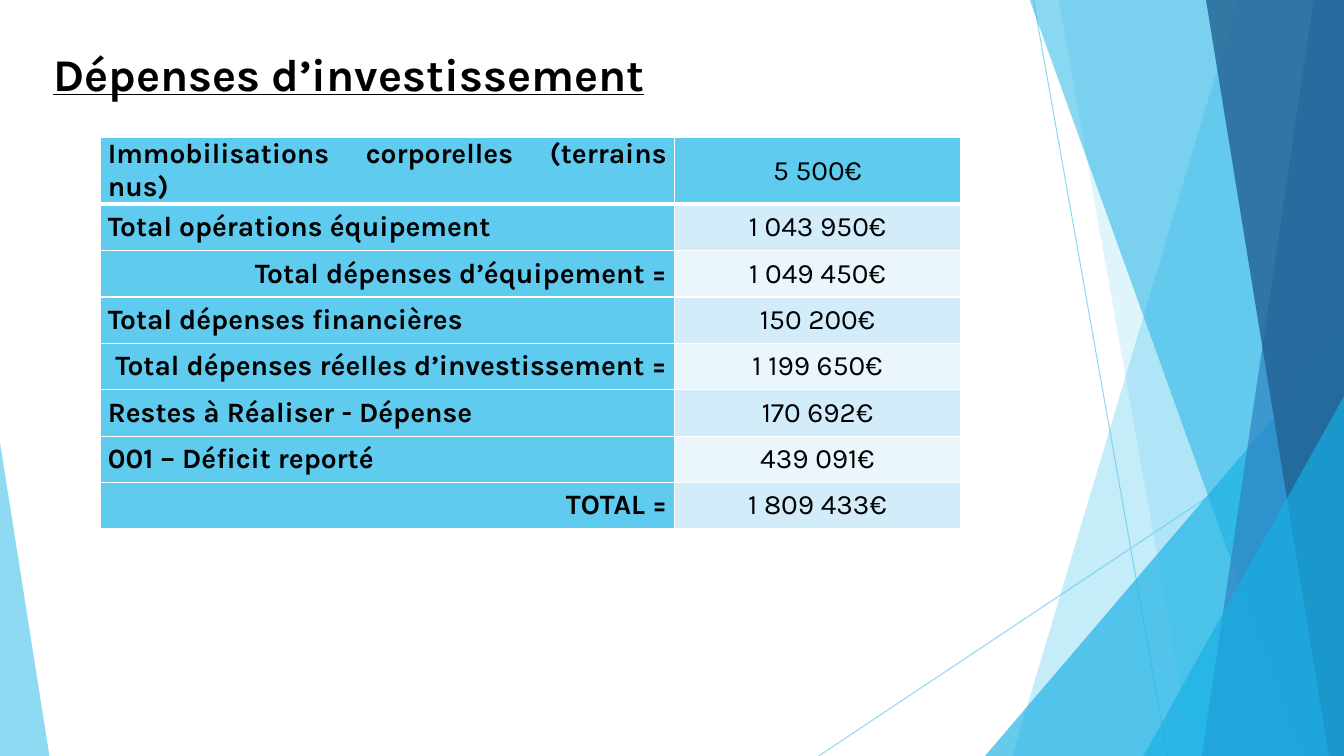
from lxml import etree
from pptx import Presentation
from pptx.dml.color import RGBColor
from pptx.enum.shapes import MSO_CONNECTOR, MSO_SHAPE
from pptx.enum.text import MSO_ANCHOR, PP_ALIGN
from pptx.oxml.ns import qn
from pptx.util import Inches, Pt

STRAIGHT = MSO_CONNECTOR.STRAIGHT
TRIANGLE = MSO_SHAPE.ISOSCELES_TRIANGLE
TOP, MIDDLE = MSO_ANCHOR.TOP, MSO_ANCHOR.MIDDLE
LEFT, CENTER, RIGHT, JUSTIFY = PP_ALIGN.LEFT, PP_ALIGN.CENTER, PP_ALIGN.RIGHT, PP_ALIGN.JUSTIFY
WIDTH, HEIGHT = 13.33, 7.5
FONT = "Karla"
COLORS = {
    "sky": "5FCBEF", "azure": "17B0E4", "blue": "2E83C3", "navy": "226292",
    "band": "D2ECF9", "pale": "EAF6FC", "white": "FFFFFF", "black": "000000",
}
EXPENSES = [
    ("Immobilisations corporelles (terrains nus)", JUSTIFY, "5 500€"),
    ("Total opérations équipement", JUSTIFY, "1 043 950€"),
    ("Total dépenses d’équipement =", RIGHT, "1 049 450€"),
    ("Total dépenses financières", JUSTIFY, "150 200€"),
    ("Total dépenses réelles d’investissement =", RIGHT, "1 199 650€"),
    ("Restes à Réaliser - Dépense", JUSTIFY, "170 692€"),
    ("001 – Déficit reporté", LEFT, "439 091€"),
    ("TOTAL =", RIGHT, "1 809 433€"),
]


def color(name):
    """Return the named colour."""
    return RGBColor.from_string(COLORS[name])


def set_alpha(part, percent):
    """Make the solid colour of a fill or line partly transparent."""
    tone = next(part.iter(qn("a:srgbClr")))
    etree.SubElement(tone, qn("a:alpha"), val=str(percent * 1000))


def paint(shape, name, percent):
    """Give a shape a translucent fill without outline or shadow."""
    shape.shadow.inherit = False
    shape.fill.solid()
    shape.fill.fore_color.rgb = color(name)
    shape.line.fill.background()
    set_alpha(shape._element.spPr, percent)


def add_ray(page, start, end):
    """Draw a thin translucent line between two points."""
    ray = page.shapes.add_connector(STRAIGHT, *(Inches(value) for value in start + end))
    ray.line.color.rgb = color("sky")
    ray.line.width = Pt(0.75)
    properties = ray._element.spPr
    set_alpha(properties, 70)
    etree.SubElement(properties, qn("a:effectLst"))


def add_facet(page, top_x, bottom_x, name, percent):
    """Draw a full-height panel from a slanted left edge to the right edge."""
    builder = page.shapes.build_freeform(Inches(top_x), Inches(-0.01))
    corners = [(WIDTH, -0.01), (WIDTH, HEIGHT), (bottom_x, HEIGHT)]
    builder.add_line_segments([(Inches(x), Inches(y)) for x, y in corners])
    paint(builder.convert_to_shape(), name, percent)


def add_wedge(page, left, top, width, apex, name, percent):
    """Draw a triangle that stands on the bottom of the slide."""
    box = (Inches(value) for value in (left, top, width, HEIGHT - top))
    wedge = page.shapes.add_shape(TRIANGLE, *box)
    wedge.adjustments[0] = apex
    paint(wedge, name, percent)


def add_backdrop(page):
    """Draw the rays, panels and triangles at the slide edges."""
    add_ray(page, (10.25, 0), (11.58, HEIGHT))
    add_ray(page, (WIDTH, 4.03), (8.12, HEIGHT))
    add_facet(page, 12.28, 10.04, "sky", 36)
    add_facet(page, 10.5, 11.83, "sky", 20)
    add_wedge(page, 9.77, 3.33, 3.56, 1, "azure", 66)
    add_facet(page, 10.21, 12.91, "azure", 50)
    add_facet(page, 13.03, 11.92, "blue", 70)
    add_facet(page, 11.96, 13.18, "navy", 80)
    add_wedge(page, 11.34, 3.93, 1.99, 1, "azure", 66)
    add_wedge(page, 0, 4.39, 0.49, 0, "sky", 70)


def style_font(font, size, bold):
    """Set the common font with a size and weight."""
    font.name = FONT
    font.size = Pt(size)
    font.bold = bold
    font.color.rgb = color("black")


def add_title(page, left, top, width, height):
    """Write the underlined title in its box."""
    box = page.shapes.add_textbox(*(Inches(value) for value in (left, top, width, height)))
    frame = box.text_frame
    frame.word_wrap = True
    frame.vertical_anchor = TOP
    frame.margin_top = Inches(0.09)
    para = frame.paragraphs[0]
    para.text = "Dépenses d’investissement"
    style_font(para.font, 32.4, True)
    para.font.underline = True


def add_borders(cell, top, bottom):
    """Draw white cell borders, with the given top and bottom widths."""
    properties = cell._tc.get_or_add_tcPr()
    for side, width in (("L", 1), ("R", 1), ("T", top), ("B", bottom)):
        line = etree.SubElement(properties, qn("a:ln" + side), w=str(Pt(width)))
        fill = etree.SubElement(line, qn("a:solidFill"))
        etree.SubElement(fill, qn("a:srgbClr"), val=COLORS["white"])


def fill_cell(cell, text, align, bold, fill):
    """Write one table cell."""
    cell.fill.solid()
    cell.fill.fore_color.rgb = color(fill)
    cell.vertical_anchor = MIDDLE
    cell.margin_left = cell.margin_right = Inches(0.07)
    cell.margin_top = cell.margin_bottom = 0
    para = cell.text_frame.paragraphs[0]
    para.text = text
    para.alignment = align
    style_font(para.font, 20, bold)


def add_expenses(page, left, top, width, height):
    """Build the table of expenses, two thirds labels and one third amounts."""
    box = (Inches(value) for value in (left, top, width, height))
    table = page.shapes.add_table(len(EXPENSES), 2, *box).table
    table.columns[0].width = Inches(width * 2 / 3)
    table.columns[1].width = Inches(width / 3)
    for index, (label, align, amount) in enumerate(EXPENSES):
        table.rows[index].height = Inches(height / len(EXPENSES))
        label_cell, amount_cell = table.rows[index].cells
        for cell in (label_cell, amount_cell):
            add_borders(cell, 3 if index == 1 else 1, 3 if index == 0 else 1)
        band = "sky" if index == 0 else "band" if index % 2 else "pale"
        fill_cell(label_cell, label, align, True, "sky")
        fill_cell(amount_cell, amount, CENTER, False, band)


def main():
    """Build and save the deck."""
    deck = Presentation()
    deck.slide_width, deck.slide_height = Inches(WIDTH), Inches(HEIGHT)
    page = deck.slides.add_slide(deck.slide_layouts[6])
    add_backdrop(page)
    add_title(page, 0.43, 0.37, 9.4, 0.8)
    add_expenses(page, 1, 1.36, 8.53, 3.68)
    deck.save("out.pptx")


if __name__ == "__main__":
    main()
